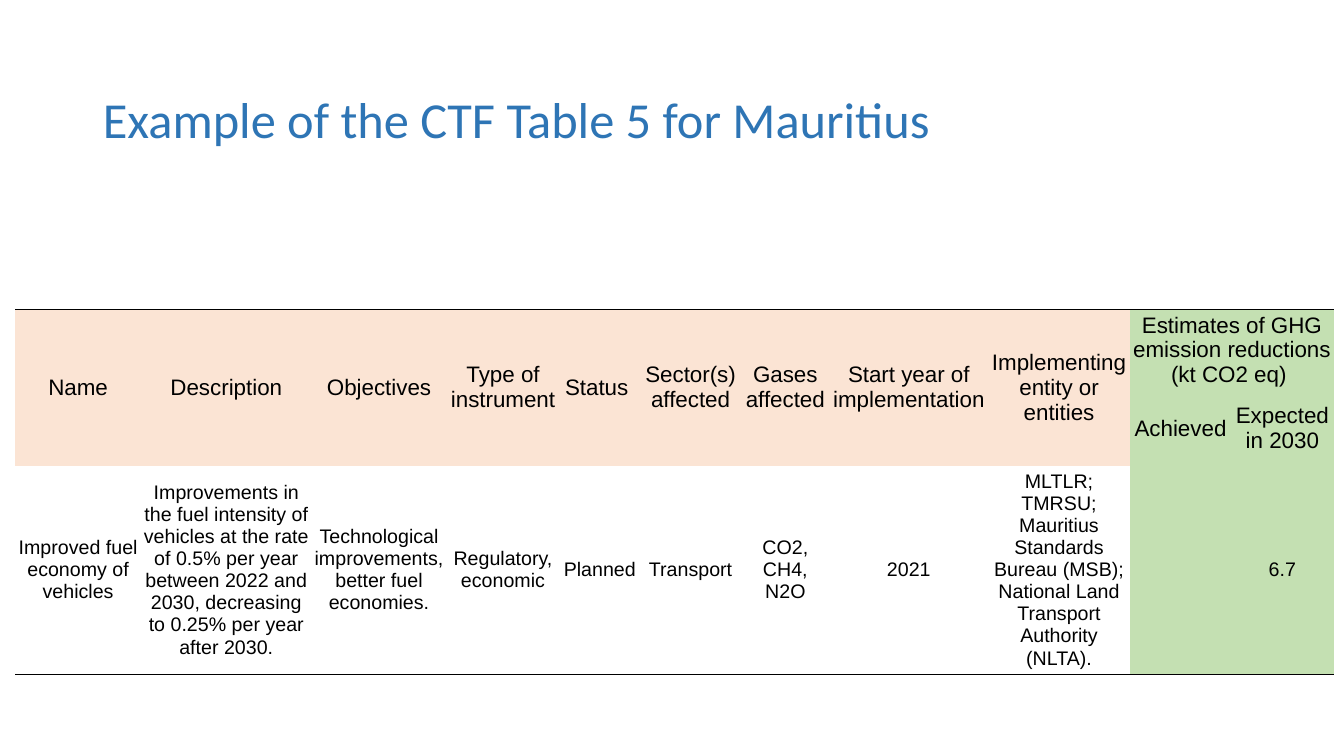
import pptx
import pptx.dml.color
import pptx.enum.text
import pptx.oxml
import pptx.oxml.ns
import pptx.util

Inches, Pt = pptx.util.Inches, pptx.util.Pt
RGBColor = pptx.dml.color.RGBColor
PP_ALIGN, ANCHOR = pptx.enum.text.PP_ALIGN, pptx.enum.text.MSO_ANCHOR

BLUE = RGBColor(0x2E, 0x75, 0xB5)
PEACH = RGBColor(0xFB, 0xE4, 0xD4)
GREEN = RGBColor(0xC4, 0xE0, 0xB2)
BLACK = RGBColor(0, 0, 0)
NO_STYLE_NO_GRID = "{2D5ABB26-0587-4C30-8999-92F81FD0307C}"

# Heading, column width in inches, value for the measure
MEASURE = [
    ("Name", 1.25, "Improved fuel economy of vehicles"),
    ("Description", 1.69,
     "Improvements in the fuel intensity of vehicles at the rate of 0.5% per year "
     "between 2022 and 2030, decreasing to 0.25% per year after 2030."),
    ("Objectives", 1.34, "Technological improvements, better fuel economies."),
    ("Type of instrument", 1.12, "Regulatory, economic"),
    ("Status ", 0.8, "Planned"),
    ("Sector(s) affected", 1, "Transport"),
    ("Gases affected", 0.88, "CO2, CH4, N2O"),
    ("Start year of implementation", 1.57, "2021"),
    ("Implementing entity or entities", 1.41,
     "MLTLR; TMRSU; Mauritius Standards Bureau (MSB); "
     "National Land Transport Authority (NLTA)."),
]
ESTIMATES = [("Achieved", 1, ""), ("Expected in 2030", 1.02, "6.7")]
ESTIMATES_HEADING = "Estimates of GHG emission reductions \n(kt CO2 eq) "
ROW_HEIGHTS = [0.81, 0.74, 2.07]
HEADING_ROWS = 2


def set_format(obj, values):
    for name, value in values.items():
        setattr(obj, name, value)


def add_border(cell, side):
    """Draw a 1 pt black line on one side ("T" or "B") of a cell."""
    line = pptx.oxml.parse_xml(
        f'<a:ln{side} {pptx.oxml.ns.nsdecls("a")} w="{Pt(1)}">'
        f'<a:solidFill><a:srgbClr val="{BLACK}"/></a:solidFill></a:ln{side}>')
    cell._tc.get_or_add_tcPr().insert(0, line)


prs = pptx.Presentation()
set_format(prs, {"slide_width": Inches(13.33), "slide_height": Inches(7.5)})
slide = prs.slides.add_slide(prs.slide_layouts[5])

# Title
title = slide.shapes.title
set_format(title, {"left": Inches(0.92), "top": Inches(0.75),
                   "width": Inches(11.49), "height": Inches(0.78)})
tf = title.text_frame
set_format(tf, {"text": "Example of the CTF Table 5 for Mauritius", "word_wrap": True,
                "vertical_anchor": ANCHOR.BOTTOM,
                "auto_size": pptx.enum.text.MSO_AUTO_SIZE.NONE})
p = tf.paragraphs[0]
set_format(p, {"alignment": PP_ALIGN.LEFT, "line_spacing": 0.9})
set_format(p.runs[0].font, {"name": "Calibri", "size": Pt(36)})
p.runs[0].font.color.rgb = BLUE

# Table
columns = MEASURE + ESTIMATES
widths = [width for _, width, _ in columns]
frame = slide.shapes.add_table(len(ROW_HEIGHTS), len(columns), Inches(0.15), Inches(3.07),
                               Inches(sum(widths)), Inches(sum(ROW_HEIGHTS)))
table = frame.table
set_format(table, {"first_row": False, "horz_banding": False})
table._tbl.tblPr.find(pptx.oxml.ns.qn("a:tableStyleId")).text = NO_STYLE_NO_GRID
for row, height in zip(table.rows, ROW_HEIGHTS):
    row.height = Inches(height)

first_estimate, last_row = len(MEASURE), len(ROW_HEIGHTS) - 1
table.cell(0, first_estimate).text = ESTIMATES_HEADING
for c, (heading, width, value) in enumerate(columns):
    table.columns[c].width = Inches(width)
    is_estimate = c >= first_estimate
    table.cell(1 if is_estimate else 0, c).text = heading
    table.cell(last_row, c).text = value
    for r in range(len(ROW_HEIGHTS)):
        cell = table.cell(r, c)
        set_format(cell, {"margin_left": 0, "margin_right": 0, "margin_top": 0,
                          "margin_bottom": 0, "vertical_anchor": ANCHOR.MIDDLE})
        is_heading = r < HEADING_ROWS
        if is_estimate or is_heading:
            cell.fill.solid()
            cell.fill.fore_color.rgb = GREEN if is_estimate else PEACH
        else:
            cell.fill.background()
        for p in cell.text_frame.paragraphs:
            p.alignment = PP_ALIGN.CENTER
            for run in p.runs:
                set_format(run.font, {"name": "Arial", "size": Pt(16 if is_heading else 14)})
                run.font.color.rgb = BLACK
    add_border(table.cell(0, c), "T")
    add_border(table.cell(last_row, c), "B")
    if not is_estimate:
        table.cell(0, c).merge(table.cell(1, c))
table.cell(0, first_estimate).merge(table.cell(0, len(columns) - 1))

prs.save("out.pptx")
